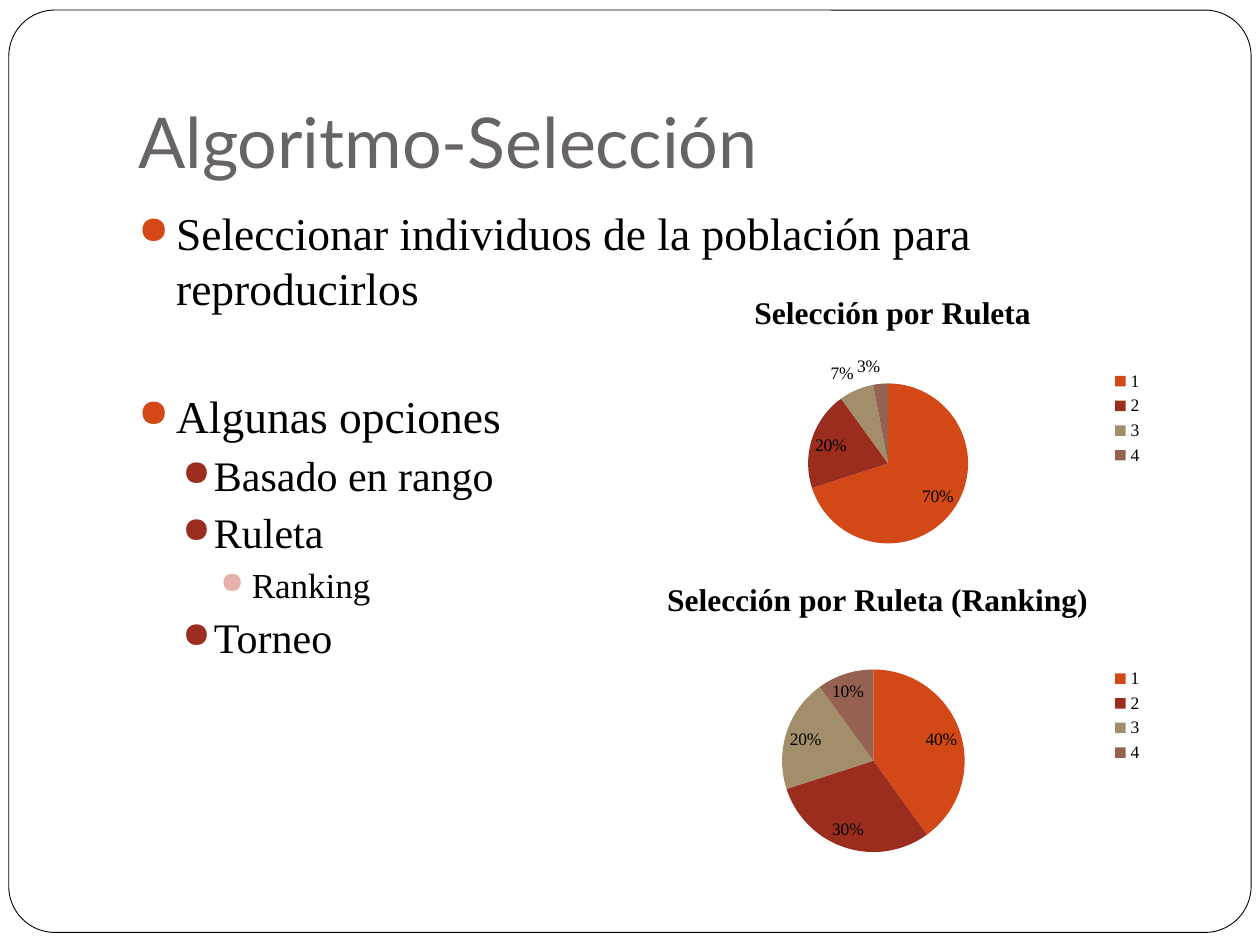
from dataclasses import dataclass

import lxml.etree
import pptx
import pptx.chart.data
import pptx.dml.color
import pptx.enum.chart
import pptx.enum.shapes
import pptx.enum.text
import pptx.oxml
import pptx.oxml.ns
import pptx.util

Inches = pptx.util.Inches
Pt = pptx.util.Pt
RGBColor = pptx.dml.color.RGBColor
qn = pptx.oxml.ns.qn

BLACK = RGBColor(0x00, 0x00, 0x00)
WHITE = RGBColor(0xFF, 0xFF, 0xFF)
GRAY = RGBColor(0x69, 0x64, 0x64)
ORANGE = RGBColor(0xD3, 0x48, 0x17)
RED = RGBColor(0x9B, 0x2D, 0x1F)
PINK = RGBColor(0xE6, 0xB1, 0xAC)
TAN = RGBColor(0xA2, 0x8E, 0x6A)
BROWN = RGBColor(0x95, 0x62, 0x51)

SLICE_COLORS = (ORANGE, RED, TAN, BROWN)
CATEGORIES = ("1", "2", "3", "4")
BODY_FONT = "Times New Roman"
TITLE_FONT = "Lato"


@dataclass(frozen=True)
class Level:
    size: float
    margin: float
    hanging: float
    space_before: float
    bullet_color: RGBColor


@dataclass(frozen=True)
class Item:
    text: str
    level: int
    extra_space: float = 0


@dataclass(frozen=True)
class Pie:
    title: str
    values: tuple[int, ...]
    left: float
    top: float
    width: float
    height: float
    center_x: float
    center_y: float
    diameter: float


LEVELS = (
    Level(26, 0.3, 0.3, 5.8, ORANGE),
    Level(24, 0.6, 0.25, 3.7, RED),
    Level(20, 0.9, 0.25, 3.7, PINK),
)

ITEMS = (
    Item("Seleccionar individuos de la población para reproducirlos", 0),
    Item("Algunas opciones", 0, extra_space=36.5),
    Item("Basado en rango", 1),
    Item("Ruleta", 1),
    Item("Ranking", 2),
    Item("Torneo", 1),
)

PIES = (
    Pie("Selección por Ruleta", (70, 20, 7, 3),
        5, 2.18, 4.17, 2.28, 7.05, 3.68, 1.27),
    Pie("Selección por Ruleta (Ranking)", (40, 30, 20, 10),
        4.76, 4.46, 4.41, 2.44, 6.93, 6.04, 1.45),
)


def add_frame(slide) -> None:
    frame = slide.shapes.add_shape(
        pptx.enum.shapes.MSO_SHAPE.ROUNDED_RECTANGLE,
        Inches(0.07), Inches(0.08), Inches(9.86), Inches(7.32))
    frame.adjustments[0] = 0.05
    frame.shadow.inherit = False
    frame.fill.solid()
    frame.fill.fore_color.rgb = WHITE
    frame.line.color.rgb = BLACK
    frame.line.width = Pt(0.5)


def add_title(slide, text: str) -> None:
    title = slide.shapes.add_textbox(
        Inches(1), Inches(0.3), Inches(8.5), Inches(1.25)).text_frame
    title.word_wrap = True
    title.vertical_anchor = pptx.enum.text.MSO_ANCHOR.BOTTOM
    title.margin_bottom = Inches(0.1)
    heading = title.paragraphs[0]
    heading.text = text
    heading.font.name = TITLE_FONT
    heading.font.size = Pt(40)
    heading.font.color.rgb = GRAY


def set_bullet(paragraph, level: Level) -> None:
    properties = paragraph._p.get_or_add_pPr()
    properties.set("marL", str(Inches(level.margin)))
    properties.set("indent", str(-Inches(level.hanging)))
    default_font = properties.find(qn("a:defRPr"))
    bullet_color = lxml.etree.Element(qn("a:buClr"))
    lxml.etree.SubElement(
        bullet_color, qn("a:srgbClr"), val=str(level.bullet_color))
    bullet_size = lxml.etree.Element(qn("a:buSzPct"), val="85000")
    bullet_char = lxml.etree.Element(qn("a:buChar"), char="●")
    for element in (bullet_color, bullet_size, bullet_char):
        if default_font is None:
            properties.append(element)
        else:
            default_font.addprevious(element)


def add_outline(slide, items: tuple[Item, ...]) -> None:
    outline = slide.shapes.add_textbox(
        Inches(1), Inches(1.58), Inches(8.5), Inches(5)).text_frame
    outline.word_wrap = True
    for index, item in enumerate(items):
        level = LEVELS[item.level]
        entry = outline.add_paragraph() if index else outline.paragraphs[0]
        entry.text = item.text
        entry.level = item.level
        entry.space_before = Pt(level.space_before + item.extra_space)
        entry.font.name = BODY_FONT
        entry.font.size = Pt(level.size)
        entry.font.color.rgb = BLACK
        set_bullet(entry, level)


def place_plot(chart, pie: Pie) -> None:
    plot_area = chart._chartSpace.chart.plotArea
    layout = plot_area.find(qn("c:layout"))
    if layout is None:
        layout = lxml.etree.Element(qn("c:layout"))
        plot_area.insert(0, layout)
    manual = lxml.etree.SubElement(layout, qn("c:manualLayout"))
    radius = pie.diameter / 2
    settings = {
        "layoutTarget": "inner",
        "xMode": "edge",
        "yMode": "edge",
        "x": round((pie.center_x - radius - pie.left) / pie.width, 3),
        "y": round((pie.center_y - radius - pie.top) / pie.height, 3),
        "w": round(pie.diameter / pie.width, 3),
        "h": round(pie.diameter / pie.height, 3),
    }
    for name, value in settings.items():
        lxml.etree.SubElement(manual, qn(f"c:{name}"), val=str(value))


def add_pie(slide, pie: Pie) -> None:
    data = pptx.chart.data.CategoryChartData()
    data.categories = CATEGORIES
    data.add_series("Series 1", pie.values)
    chart = slide.shapes.add_chart(
        pptx.enum.chart.XL_CHART_TYPE.PIE, Inches(pie.left), Inches(pie.top),
        Inches(pie.width), Inches(pie.height), data).chart
    chart.font.name = BODY_FONT
    chart.font.size = Pt(10)
    chart.font.color.rgb = BLACK

    chart.has_title = True
    heading = chart.chart_title.text_frame.paragraphs[0]
    heading.text = pie.title
    heading.font.name = BODY_FONT
    heading.font.size = Pt(18)
    heading.font.bold = True
    heading.font.color.rgb = BLACK

    chart.has_legend = True
    chart.legend.position = pptx.enum.chart.XL_LEGEND_POSITION.RIGHT
    chart.legend.include_in_layout = False

    plot = chart.plots[0]
    plot.vary_by_categories = True
    for index, color in enumerate(SLICE_COLORS):
        fill = plot.series[0].points[index].format.fill
        fill.solid()
        fill.fore_color.rgb = color
    plot.has_data_labels = True
    labels = plot.data_labels
    labels.show_value = False
    labels.show_percentage = True
    labels.number_format = "0%"
    labels.number_format_is_linked = False
    labels.position = pptx.enum.chart.XL_LABEL_POSITION.BEST_FIT
    place_plot(chart, pie)


def main() -> None:
    presentation = pptx.Presentation()
    presentation.slide_width = Inches(10)
    presentation.slide_height = Inches(7.5)
    slide = presentation.slides.add_slide(presentation.slide_layouts[6])
    add_frame(slide)
    add_title(slide, "Algoritmo-Selección")
    add_outline(slide, ITEMS)
    for pie in PIES:
        add_pie(slide, pie)
    presentation.save("out.pptx")


if __name__ == "__main__":
    main()
